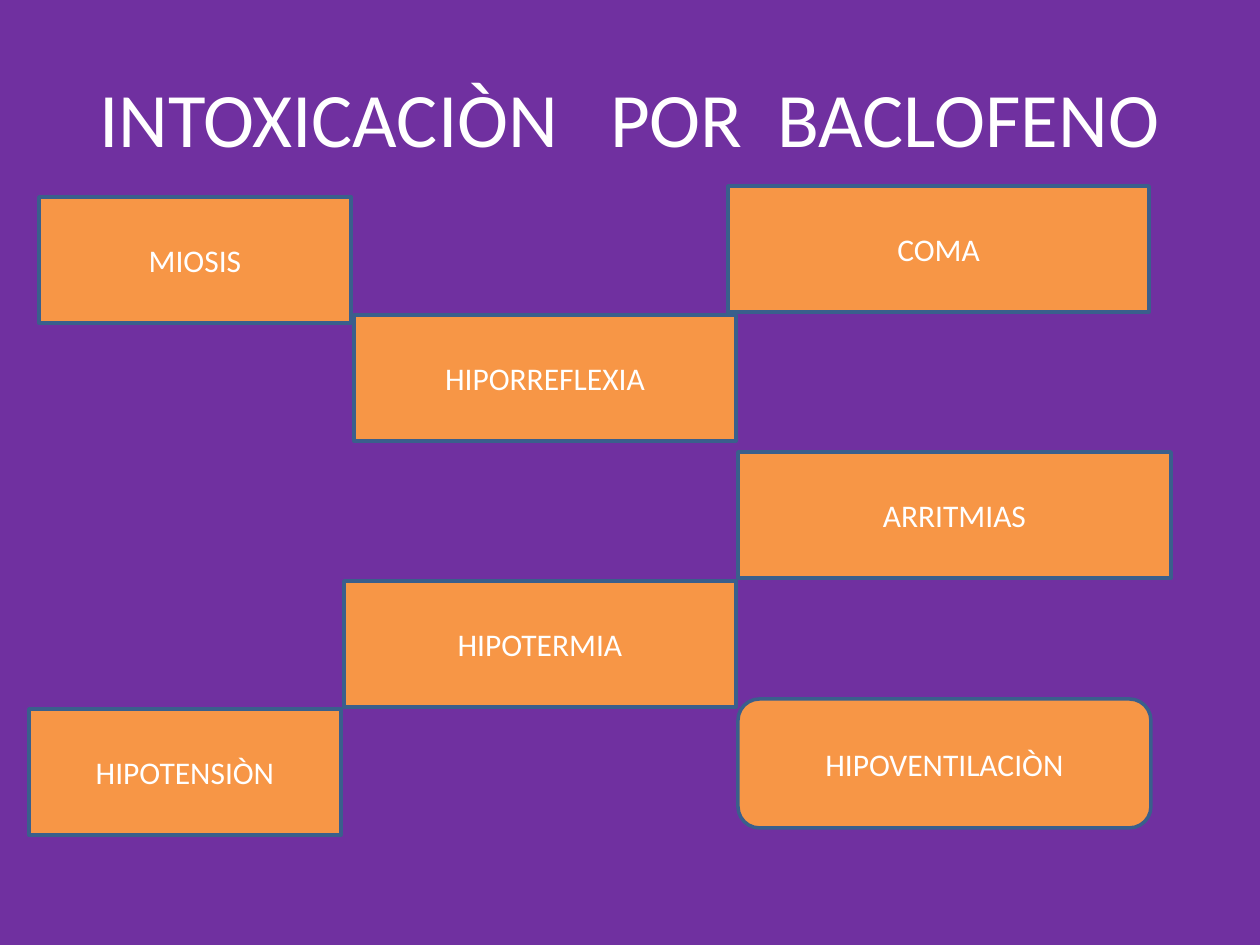
from pptx import Presentation
from pptx.dml.color import RGBColor
from pptx.enum.shapes import MSO_SHAPE as Shape
from pptx.enum.text import MSO_ANCHOR as Anchor, PP_ALIGN as Align
from pptx.util import Emu, Pt

PX_PER_INCH = 126
COLORS = {"background": "7030A0", "box": "F79646", "outline": "3A5F8C", "text": "FFFFFF"}
FONT = "Calibri"
BOX_HEIGHT = 126

# Symptom, (left, top, width, height) in px, outline shape
SYMPTOMS = [
    ("HIPORREFLEXIA", (354, 315, 382, BOX_HEIGHT), Shape.RECTANGLE),
    ("HIPOTERMIA", (344, 581, 392, BOX_HEIGHT), Shape.RECTANGLE),
    ("COMA", (728, 186, 421, BOX_HEIGHT), Shape.RECTANGLE),
    ("HIPOVENTILACIÒN", (738, 699, 413, 129), Shape.ROUNDED_RECTANGLE),
    ("HIPOTENSIÒN", (29, 709, 312, BOX_HEIGHT), Shape.RECTANGLE),
    ("ARRITMIAS", (738, 452, 433, BOX_HEIGHT), Shape.RECTANGLE),
    ("MIOSIS", (39, 197, 312, BOX_HEIGHT), Shape.RECTANGLE),
]


def px(length):
    return Emu(round(length * 914400 / PX_PER_INCH))


def color(name):
    return RGBColor.from_string(COLORS[name])


def write_centered(shape, text, size):
    frame = shape.text_frame
    frame.word_wrap = True
    frame.vertical_anchor = Anchor.MIDDLE
    paragraph = frame.paragraphs[0]
    paragraph.text = text
    paragraph.alignment = Align.CENTER
    paragraph.font.name = FONT
    paragraph.font.size = Pt(size)
    paragraph.font.color.rgb = color("text")


def place_title(slide, box, text):
    title = slide.shapes.title
    title.left, title.top, title.width, title.height = map(px, box)
    write_centered(title, text, 44)


def add_symptom(slide, box, text, outline):
    shape = slide.shapes.add_shape(outline, *map(px, box))
    shape.shadow.inherit = False
    shape.fill.solid()
    shape.fill.fore_color.rgb = color("box")
    shape.line.color.rgb = color("outline")
    shape.line.width = Pt(2)
    write_centered(shape, text, 18)


def main():
    presentation = Presentation()
    presentation.slide_width, presentation.slide_height = px(1260), px(945)
    title_only = presentation.slide_layouts[5]
    slide = presentation.slides.add_slide(title_only)

    # Background
    slide.background.fill.solid()
    slide.background.fill.fore_color.rgb = color("background")

    # Title and symptom boxes
    place_title(slide, (63, 38, 1134, 158), "INTOXICACIÒN   POR  BACLOFENO")
    for text, box, outline in SYMPTOMS:
        add_symptom(slide, box, text, outline)

    presentation.save("out.pptx")


if __name__ == "__main__":
    main()
